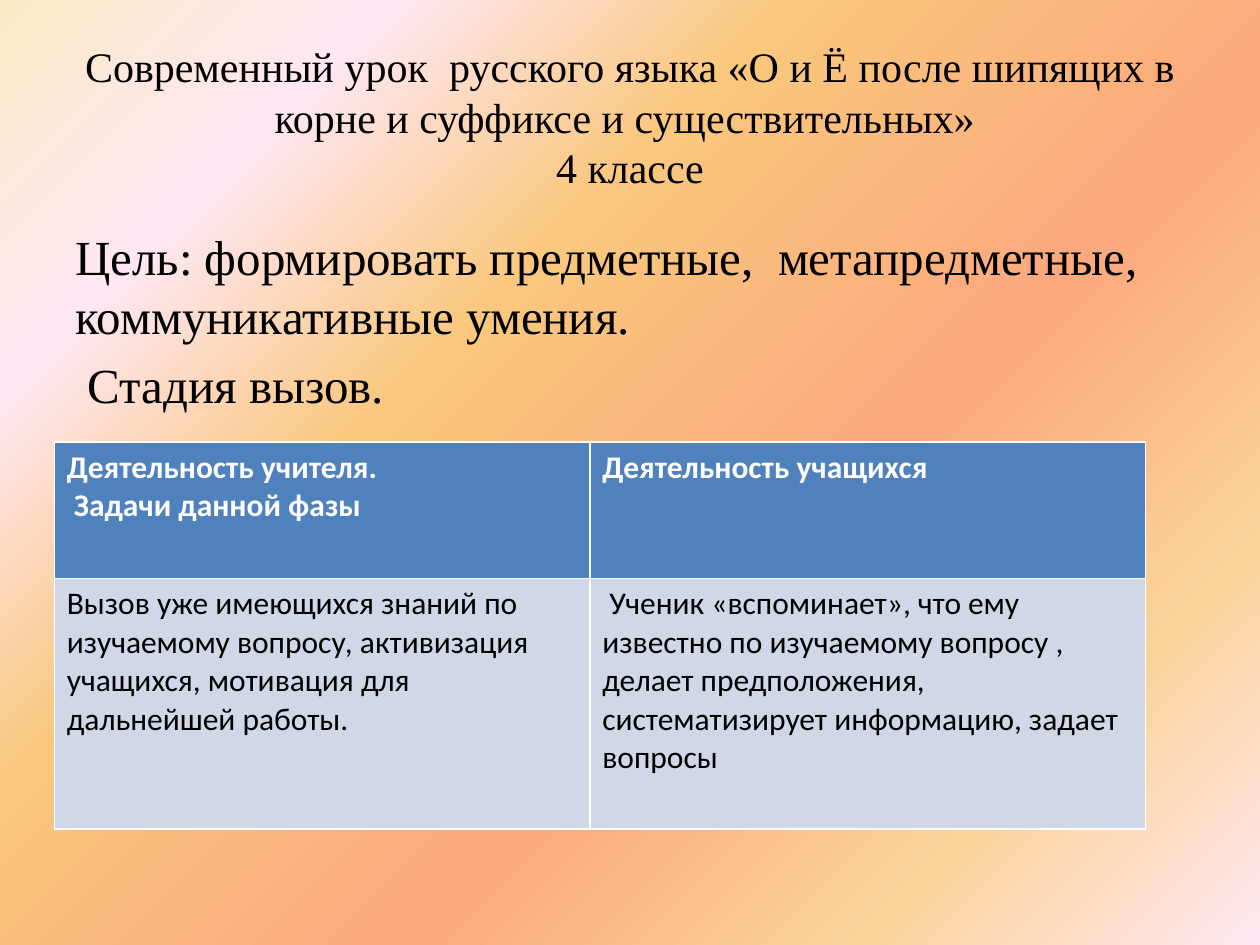
from copy import deepcopy

from pptx import Presentation
from pptx.dml.color import RGBColor
from pptx.enum.text import MSO_ANCHOR, MSO_AUTO_SIZE, PP_ALIGN
from pptx.util import Pt

BLACK = RGBColor(0x00, 0x00, 0x00)
WHITE = RGBColor(0xFF, 0xFF, 0xFF)
HEADER_BLUE = RGBColor(0x4F, 0x81, 0xBD)
PALE_BLUE = RGBColor(0xD0, 0xD8, 0xE8)
CREAM = RGBColor(0xFB, 0xEA, 0xC7)
PINK = RGBColor(0xFE, 0xE7, 0xF2)
AMBER = RGBColor(0xFA, 0xC7, 0x7D)
CORAL = RGBColor(0xFB, 0xA9, 0x7D)
SAND = RGBColor(0xFB, 0xD4, 0x9C)

SUNRISE = [(0, CREAM), (0.18, PINK), (0.36, AMBER),
           (0.61, CORAL), (0.82, SAND), (1, PINK)]

TITLE = ("Современный урок  русского языка «О и Ё после шипящих в корне "
         "и суффиксе и существительных» \v4 классе")
GOAL = ["Цель: формировать предметные,  метапредметные,  коммуникативные умения.",
        " Стадия вызов."]
ACTIVITIES = [
    [["Деятельность учителя.", " Задачи данной фазы"],
     ["Деятельность учащихся"]],
    [["Вызов уже имеющихся знаний по изучаемому вопросу, активизация "
      "учащихся, мотивация для дальнейшей работы."],
     [" Ученик «вспоминает», что ему известно по изучаемому вопросу , "
      "делает предположения, систематизирует информацию, задает вопросы"]],
]


def write(tf, paragraphs, font, size, color=BLACK, bold=False,
          align=PP_ALIGN.LEFT, before=0):
    """Fill a text frame; a vertical tab in the text is a line break."""
    tf.word_wrap = True
    for i, text in enumerate(paragraphs):
        p = tf.paragraphs[0] if i == 0 else tf.add_paragraph()
        p.text = text
        p.alignment = align
        p.space_before = Pt(before)
        for r in p.runs:
            r.font.name = font
            r.font.size = Pt(size)
            r.font.bold = bold
            r.font.color.rgb = color


class Deck:
    heading_font = "Times New Roman"
    table_font = "Calibri"

    def __init__(self, width, height):
        self.prs = Presentation()
        self.prs.slide_width, self.prs.slide_height = Pt(width), Pt(height)

    def add_slide(self):
        self.s = self.prs.slides.add_slide(self.prs.slide_layouts[5])

    def gradient_background(self, stops):
        fill = self.s.background.fill
        fill.gradient()
        fill.gradient_angle = 315
        stop_list = self.s.element.xpath(".//a:gsLst")[0]
        for _ in range(len(stops) - len(stop_list)):
            stop_list.append(deepcopy(stop_list[0]))
        for stop, (position, color) in zip(fill.gradient_stops, stops):
            stop.position = position
            stop.color.rgb = color

    def title(self, text, left, top, width, height):
        sp = self.s.shapes.title
        sp.left, sp.top, sp.width, sp.height = map(Pt, (left, top, width, height))
        tf = sp.text_frame
        tf.auto_size = MSO_AUTO_SIZE.NONE
        tf.vertical_anchor = MSO_ANCHOR.MIDDLE
        write(tf, [text], self.heading_font, 24, align=PP_ALIGN.CENTER)

    def body(self, paragraphs, left, top, width, height):
        sp = self.s.shapes.add_textbox(*map(Pt, (left, top, width, height)))
        write(sp.text_frame, paragraphs, self.heading_font, 28, before=5.6)

    def table(self, rows, left, top, widths, heights):
        frame = self.s.shapes.add_table(
            len(heights), len(widths),
            *map(Pt, (left, top, sum(widths), sum(heights))))
        table = frame.table
        for column, width in zip(table.columns, widths):
            column.width = Pt(width)
        for i, (row, height) in enumerate(zip(table.rows, heights)):
            row.height = Pt(height)
            header = i == 0
            for cell, paragraphs in zip(row.cells, rows[i]):
                cell.fill.solid()
                cell.fill.fore_color.rgb = HEADER_BLUE if header else PALE_BLUE
                write(cell.text_frame, paragraphs, self.table_font, 18,
                      color=WHITE if header else BLACK, bold=header)


def main():
    deck = Deck(720, 540)
    deck.add_slide()
    deck.gradient_background(SUNRISE)
    deck.title(TITLE, 36, 21.6, 648, 90)
    deck.body(GOAL, 36, 126, 648, 356.4)
    deck.table(ACTIVITIES, 31, 252.7, widths=[306, 317.5], heights=[77.8, 143.3])
    deck.prs.save("out.pptx")


if __name__ == "__main__":
    main()
